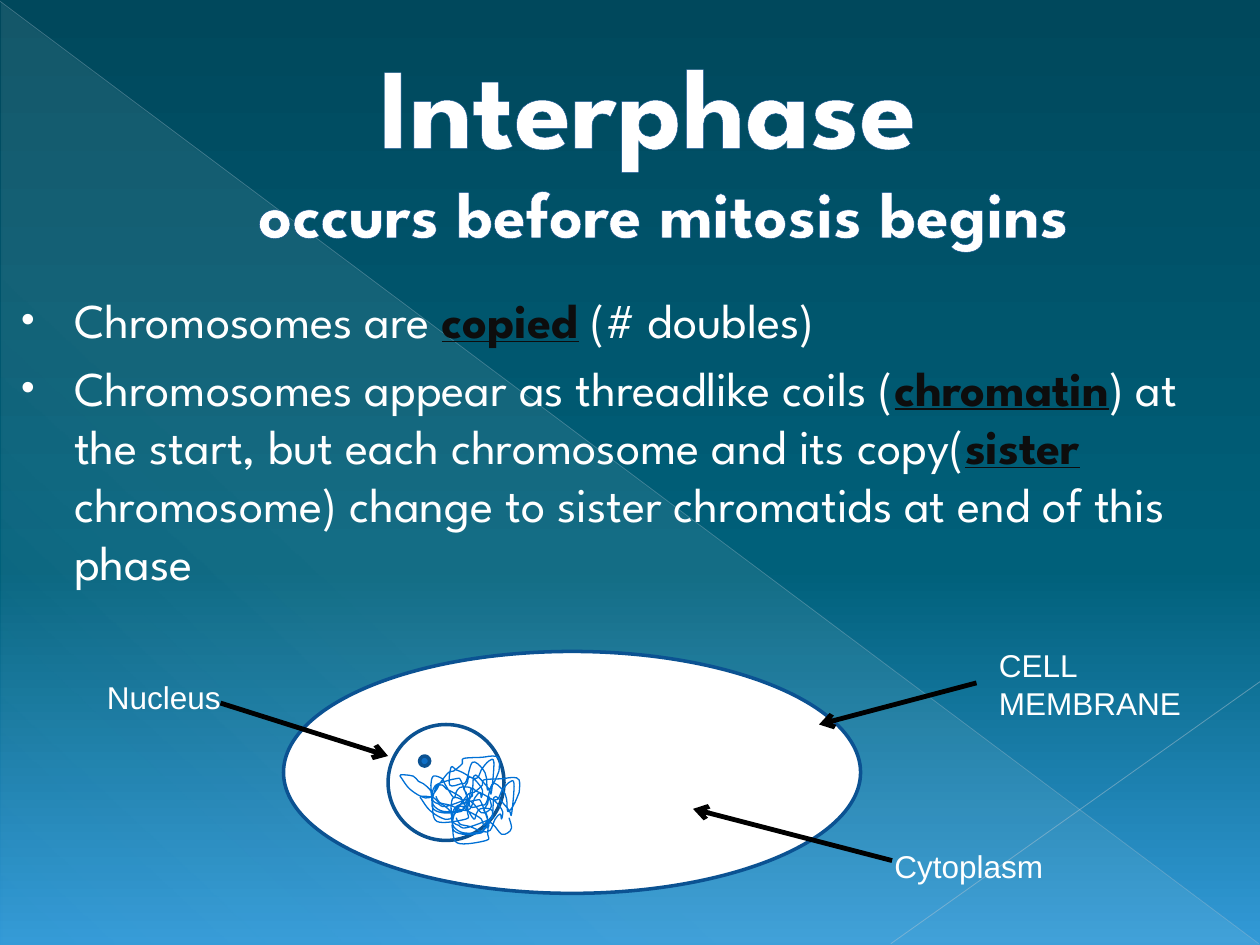
from lxml import etree
from pptx import Presentation
from pptx.dml.color import RGBColor
from pptx.enum.shapes import MSO_CONNECTOR, MSO_SHAPE
from pptx.enum.text import MSO_ANCHOR, PP_ALIGN
from pptx.oxml.ns import qn
from pptx.util import Pt

PX = 9144
LINE = MSO_CONNECTOR.STRAIGHT
OVAL = MSO_SHAPE.OVAL
DISC = MSO_SHAPE.FLOWCHART_CONNECTOR
WEDGE = MSO_SHAPE.RIGHT_TRIANGLE
MIDDLE = MSO_ANCHOR.MIDDLE
TOP = MSO_ANCHOR.TOP
CENTER = PP_ALIGN.CENTER

WHITE = RGBColor(0xFF, 0xFF, 0xFF)
BLACK = RGBColor(0x00, 0x00, 0x00)
INK = RGBColor(0x0D, 0x0D, 0x0D)
NAVY = RGBColor(0x0B, 0x52, 0x92)
EDGE = RGBColor(0x0A, 0x4D, 0x89)
BLUE = RGBColor(0x0F, 0x6F, 0xC6)
THREAD = RGBColor(0x00, 0x70, 0xD5)
DEEP = RGBColor(0x00, 0x48, 0x5C)
TEAL = RGBColor(0x00, 0x60, 0x7A)
SKY = RGBColor(0x32, 0x99, 0xD7)
PALE = RGBColor(0xDB, 0xF5, 0xF9)
MIST = RGBColor(0xAC, 0xC0, 0xCE)
HAZE = RGBColor(0xB5, 0xC7, 0xD3)
HEAD = "League Spartan"

COIL = [
    (29, 32), (32, 37), (40, 39), (50, 43), (56, 42), (60, 33), (64, 29), (65, 33),
    (66, 29), (65, 25), (59, 18), (55, 17), (54, 21), (51, 26), (53, 29), (54, 34),
    (51, 38), (49, 33), (41, 28), (37, 26), (34, 23), (29, 25), (26, 40), (34, 45),
    (49, 44), (51, 40), (55, 38), (49, 20), (45, 18), (31, 22), (27, 26),
    (26, 31), (27, 39), (35, 44), (49, 43), (54, 37), (58, 29), (56, 25), (48, 25),
    (45, 29), (43, 33), (36, 22), (34, 18), (27, 16), (25, 23), (26, 32), (27, 36),
    (31, 38), (37, 40), (56, 33), (58, 29), (59, 16), (63, 17), (71, 26), (73, 29),
    (75, 5), (71, 4), (65, 11), (63, 16), (59, 18), (50, 13), (45, 11), (41, 9),
    (40, 23), (49, 22), (53, 20), (58, 5), (66, 10), (69, 17), (70, 27), (74, 23),
    (77, 17), (79, 12), (79, 2), (74, 0), (66, 1), (51, 2), (50, 6), (43, 12),
    (39, 13), (32, 22), (30, 26), (24, 33), (17, 32), (8, 26), (2, 18), (1, 15),
    (11, 16), (15, 20), (19, 22), (25, 28), (26, 37), (30, 52), (53, 50), (54, 45),
    (55, 36), (59, 38), (65, 45), (70, 44), (73, 40), (71, 32),
]


def emu(*nums):
    """Turn px into EMU."""
    return [round(n * PX) for n in nums]


def add(root, tag, **attrs):
    """Append a drawing element."""
    return etree.SubElement(root, qn("a:" + tag), attrs)


def tint(root, color, alpha):
    """Append a colour with its opacity in percent."""
    add(add(root, "srgbClr", val=str(color)), "alpha", val=str(alpha * 1000))


def blend(fill, root, angle, stops):
    """Fill with a gradient of (place, colour, opacity) stops."""
    fill.gradient()
    fill.gradient_angle = 360 - angle
    row = next(root.iter(qn("a:gsLst")))
    for old in list(row):
        row.remove(old)
    for place, color, alpha in stops:
        tint(add(row, "gs", pos=str(place * 1000)), color, alpha)


def draw(slide, kind, box, fill=None, line=NAVY):
    """Add a preset shape, filled and outlined."""
    shape = slide.shapes.add_shape(kind, *emu(*box))
    shape.shadow.inherit = False
    if fill is None:
        shape.fill.background()
    else:
        shape.fill.solid()
        shape.fill.fore_color.rgb = fill
    if line is None:
        shape.line.fill.background()
    else:
        shape.line.color.rgb = line
        shape.line.width = Pt(2)
    return shape


def link(slide, ends, color, width, alpha=100, arrow=False):
    """Add a straight line, with an arrowhead at its end if asked."""
    wire = slide.shapes.add_connector(LINE, *emu(*ends))
    wire.line.color.rgb = color
    wire.line.width = Pt(width)
    props = wire.element.spPr
    add(props, "effectLst")
    if alpha < 100:
        add(next(props.iter(qn("a:srgbClr"))), "alpha", val=str(alpha * 1000))
    if arrow:
        add(props.find(qn("a:ln")), "tailEnd", type="arrow")


def put(para, text, size=18, font="Arial", color=WHITE, bold=False, under=False):
    """Add a run of formatted text."""
    run = para.add_run()
    run.text = text
    run.font.size = Pt(size)
    run.font.name = font
    run.font.color.rgb = color
    run.font.bold = bold
    run.font.underline = under
    return run


def frame(slide, box, wrap=True, anchor=TOP):
    """Add a text box and return its frame."""
    text = slide.shapes.add_textbox(*emu(*box)).text_frame
    text.word_wrap = wrap
    text.vertical_anchor = anchor
    return text


def indent(para, left, first=0):
    """Set the left margin and first-line indent."""
    props = para._p.get_or_add_pPr()
    props.set("marL", str(left * PX))
    props.set("indent", str(first * PX))
    return props


def backdrop(slide, x, y, w, h):
    """Paint the gradient, the pale wedge and the thin diagonals."""
    blend(slide.background.fill, slide.element, 90,
          [(0, DEEP, 100), (60, TEAL, 100), (100, SKY, 100)])
    wedge = draw(slide, WEDGE, (x + 1, y + 2, w - 1, h - 2), line=None)
    blend(wedge.fill, wedge.element, 133, [(0, PALE, 10), (70, PALE, 8), (100, PALE, 1)])
    link(slide, (x, y + 1, x + w - 1, y + h - 1), MIST, 0.39, alpha=35)
    link(slide, (x + w, y + 541, x + 707, y + h - 1), HAZE, 0.47, alpha=45)


def title(slide, *box):
    """Write the two-line heading."""
    para = frame(slide, box, anchor=MIDDLE).paragraphs[0]
    para.alignment = CENTER
    indent(para, 53)
    runs = [put(para, "Interphase ", size=65.7, font=HEAD, bold=True)]
    para.add_line_break()
    runs.append(put(para, "occurs before mitosis begins", size=37.8, font=HEAD, bold=True))
    for run in runs:
        props = run.font._element
        rim = etree.Element(qn("a:ln"), w="6350")
        add(add(rim, "solidFill"), "srgbClr", val=str(EDGE))
        props.insert(0, rim)


def points(slide, *box):
    """Write the bullets, with every second part stressed."""
    text = frame(slide, box)
    items = [
        ("Chromosomes are ", "copied", " (# doubles)"),
        ("Chromosomes appear as threadlike coils (", "chromatin",
         ") at the start, but each chromosome and its copy(", "sister",
         " chromosome) change to sister chromatids at end of this phase"),
    ]
    for n, parts in enumerate(items):
        para = text.add_paragraph() if n else text.paragraphs[0]
        para.space_before = Pt(5.6)
        props = indent(para, 49, -42)
        add(add(props, "buClr"), "srgbClr", val=str(WHITE))
        add(props, "buSzPct", val="80000")
        add(props, "buFont", typeface="Arial")
        add(props, "buChar", char="•")
        for k, part in enumerate(parts):
            key = k % 2 == 1
            put(para, part, size=27.7, font=HEAD, color=INK if key else WHITE,
                bold=key, under=key)


def smooth(shape):
    """Turn the straight segments of an outline into flowing curves."""
    track = next(shape.element.iter(qn("a:path")))
    knots = [(int(pt.get("x")), int(pt.get("y"))) for pt in track.iter(qn("a:pt"))]
    for leg in track.findall(qn("a:lnTo")):
        track.remove(leg)
    ends = [knots[0], *knots, knots[-1]]
    for a, b, c, d in zip(ends, ends[1:], ends[2:], ends[3:]):
        leg = add(track, "cubicBezTo")
        first = [q + (r - p) / 6 for p, q, r in zip(a, b, c)]
        last = [r - (s - q) / 6 for q, r, s in zip(b, c, d)]
        for px, py in (first, last, c):
            add(leg, "pt", x=str(round(px)), y=str(round(py)))


def coil(slide, x, y):
    """Draw one tangled thread."""
    knots = [emu(x + dx, y + dy) for dx, dy in COIL]
    pen = slide.shapes.build_freeform(*knots[0])
    pen.add_line_segments(knots[1:], close=False)
    shape = pen.convert_to_shape()
    smooth(shape)
    shape.shadow.inherit = False
    shape.fill.background()
    shape.line.color.rgb = THREAD
    shape.line.width = Pt(0.75)


def cell(slide, x, y):
    """Draw the cell with its threads, arrows and labels."""
    draw(slide, OVAL, (x + 150, y + 9, 458, 192), WHITE)
    draw(slide, DISC, (x + 233, y + 67, 92, 92))
    coil(slide, x + 242, y + 92)
    draw(slide, DISC, (x + 258, y + 92, 8, 8), BLUE)
    labels = [
        ("CELL MEMBRANE", (708, 0, 217, 71), True, (700, 34, 575, 67)),
        ("Nucleus", (0, 25, 111, 40), False, (100, 50, 233, 92)),
        ("Cytoplasm", (625, 159, 139, 40), False, (633, 175, 475, 134)),
    ]
    for text, (dx, dy, w, h), wrap, (ax, ay, bx, by) in labels:
        link(slide, (x + ax, y + ay, x + bx, y + by), BLACK, 2.75, arrow=True)
        put(frame(slide, (x + dx, y + dy, w, h), wrap).paragraphs[0], text)
    coil(slide, x + 258, y + 109)


def main():
    """Build and save the slide."""
    deck = Presentation()
    deck.slide_width, deck.slide_height = emu(1000, 750)
    slide = deck.slides.add_slide(deck.slide_layouts[6])
    backdrop(slide, 0, 0, 1000, 750)
    title(slide, 0, 16, 1000, 194)
    points(slide, 0, 225, 1000, 275)
    cell(slide, 75, 508)
    deck.save("out.pptx")


if __name__ == "__main__":
    main()
